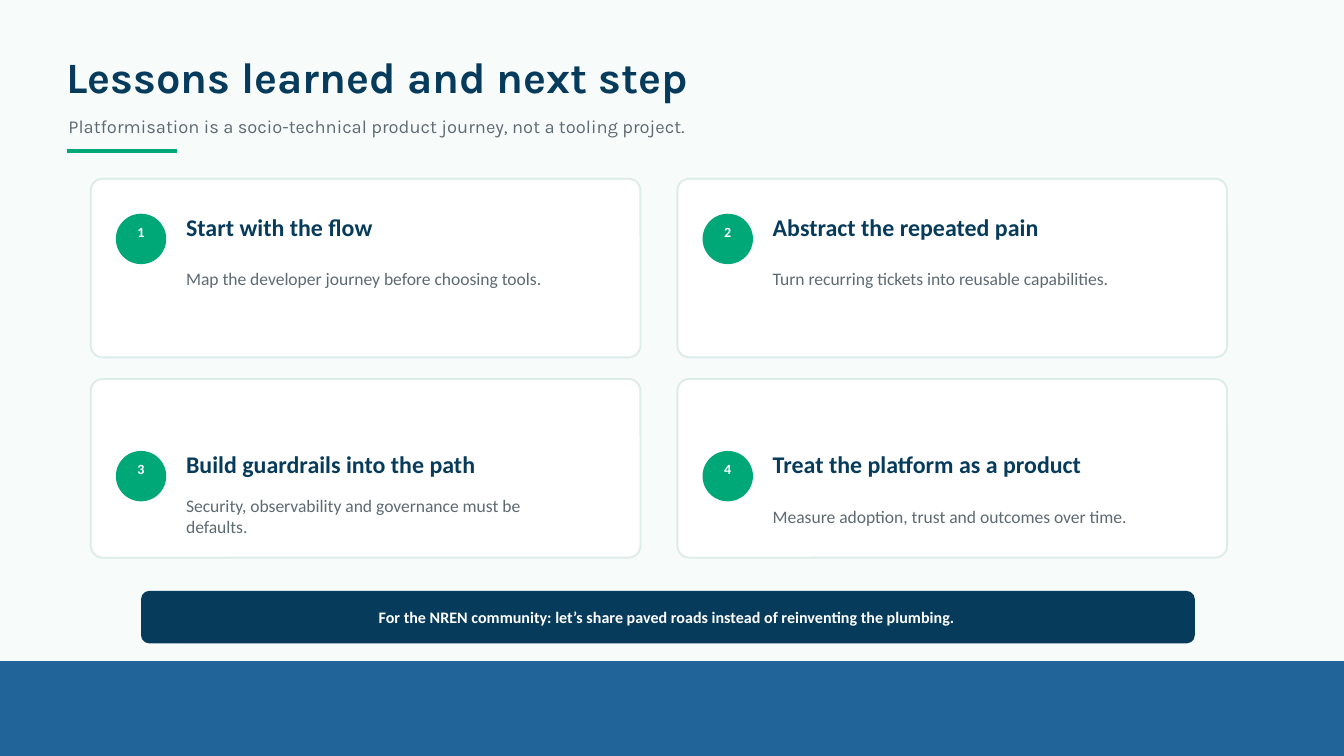
from lxml.etree import SubElement
from pptx import Presentation
from pptx.dml.color import RGBColor
from pptx.enum.shapes import MSO_CONNECTOR as Connector, MSO_SHAPE as Shape
from pptx.enum.text import MSO_ANCHOR as Anchor, MSO_AUTO_SIZE as AutoSize, PP_ALIGN as Align
from pptx.oxml.ns import qn
from pptx.util import Inches, Pt

MIST = RGBColor(0xF7, 0xFB, 0xFA)
NAVY = RGBColor(0x07, 0x3B, 0x5C)
BLUE = RGBColor(0x20, 0x64, 0x9A)
GREEN = RGBColor(0x00, 0xA8, 0x78)
GREY = RGBColor(0x5E, 0x6A, 0x72)
BORDER = RGBColor(0xDD, 0xEB, 0xE9)
WHITE = RGBColor(0xFF, 0xFF, 0xFF)

COLUMNS, ROWS = 100, 56.25
CARD_LEFT, CARD_TOP = 6.75, 13.3
CARD_WIDTH, CARD_HEIGHT = 40.9, 13.3
COLUMN_STEP, ROW_STEP = 43.65, 14.9
CONTENT_OFFSETS = (2.6, 5.35)

LESSONS = [
    ("Start with the flow", "Map the developer journey before choosing tools."),
    ("Abstract the repeated pain", "Turn recurring tickets into reusable capabilities."),
    ("Build guardrails into the path", "Security, observability and governance must be defaults."),
    ("Treat the platform as a product", "Measure adoption, trust and outcomes over time."),
]


class SlideBuilder:
    heading_font = "Karla"
    body_font = "Calibri"

    def __init__(self, deck):
        self.slide = deck.slides.add_slide(deck.slide_layouts[5])
        self.column = deck.slide_width / COLUMNS
        self.row = deck.slide_height / ROWS
        fill = self.slide.background.fill
        fill.solid()
        fill.fore_color.rgb = MIST

    def place(self, left, top, width, height):
        return (round(left * self.column), round(top * self.row),
                round(width * self.column), round(height * self.row))

    def style_text(self, box, text, size, color, bold, font, align):
        frame = box.text_frame
        frame.text = text
        frame.word_wrap = True
        frame.auto_size = AutoSize.NONE
        frame.vertical_anchor = Anchor.MIDDLE
        frame.margin_left = frame.margin_right = 0
        frame.margin_top = frame.margin_bottom = 0
        para = frame.paragraphs[0]
        para.alignment = align
        span = para.runs[0]
        span.font.name = font
        span.font.size = Pt(size)
        span.font.bold = bold
        span.font.color.rgb = color

    def title(self, text, area):
        box = self.slide.shapes.title
        box.left, box.top, box.width, box.height = self.place(*area)
        self.style_text(box, text, 23.2, NAVY, True, self.heading_font, Align.LEFT)

    def text(self, text, area, size, color, bold=False, font=body_font, align=Align.LEFT):
        box = self.slide.shapes.add_textbox(*self.place(*area))
        self.style_text(box, text, size, color, bold, font, align)

    def shape(self, kind, area, color, border=None, corner=None):
        shape = self.slide.shapes.add_shape(kind, *self.place(*area))
        shape.shadow.inherit = False
        shape.fill.solid()
        shape.fill.fore_color.rgb = color
        if border is None:
            shape.line.fill.background()
        else:
            shape.line.color.rgb = border
            shape.line.width = Pt(1)
        if corner is not None:
            shape.adjustments[0] = corner

    def rule(self, left, top, length):
        x, y, width, _ = self.place(left, top, length, 0)
        line = self.slide.shapes.add_connector(Connector.STRAIGHT, x, y, x + width, y)
        line.line.color.rgb = GREEN
        line.line.width = Pt(2)
        SubElement(line._element.spPr, qn("a:effectLst"))

    def card(self, number, heading, detail, left, top, offset):
        self.shape(Shape.ROUNDED_RECTANGLE, (left, top, CARD_WIDTH, CARD_HEIGHT),
                   WHITE, BORDER, 0.067)
        content = top + offset
        badge, label = left + 1.87, left + 7.1
        self.shape(Shape.OVAL, (badge, content, 3.75, 3.75), GREEN)
        self.text(str(number), (badge, content + 0.85, 3.75, 1), 7.5, WHITE,
                  bold=True, align=Align.CENTER)
        self.text(heading, (label, content, 27.7, 2), 12.8, NAVY, bold=True)
        self.text(detail, (label, content + 3.25, 29.6, 3.2), 9.4, GREY)


def main():
    deck = Presentation()
    deck.slide_width, deck.slide_height = Inches(10), Inches(5.625)
    page = SlideBuilder(deck)

    page.shape(Shape.RECTANGLE, (0, 49.2, COLUMNS, ROWS - 49.2), BLUE)
    page.title("Lessons learned and next step", (4.95, 3.6, 80.3, 4.1))
    page.text("Platformisation is a socio-technical product journey, not a tooling project.",
              (5.1, 8.2, 75, 2.4), 9.8, GREY, font=page.heading_font)
    page.rule(4.95, 11.25, 8.25)

    for index, (heading, detail) in enumerate(LESSONS):
        row, column = divmod(index, 2)
        page.card(index + 1, heading, detail, CARD_LEFT + column * COLUMN_STEP,
                  CARD_TOP + row * ROW_STEP, CONTENT_OFFSETS[row])

    page.shape(Shape.ROUNDED_RECTANGLE, (10.5, 43.97, 78.4, 3.9), NAVY, corner=0.154)
    page.text("For the NREN community: let’s share paved roads instead of reinventing the plumbing.",
              (11.6, 45.2, 76.1, 1.4), 8.6, WHITE, bold=True, align=Align.CENTER)

    deck.save("out.pptx")


if __name__ == "__main__":
    main()
